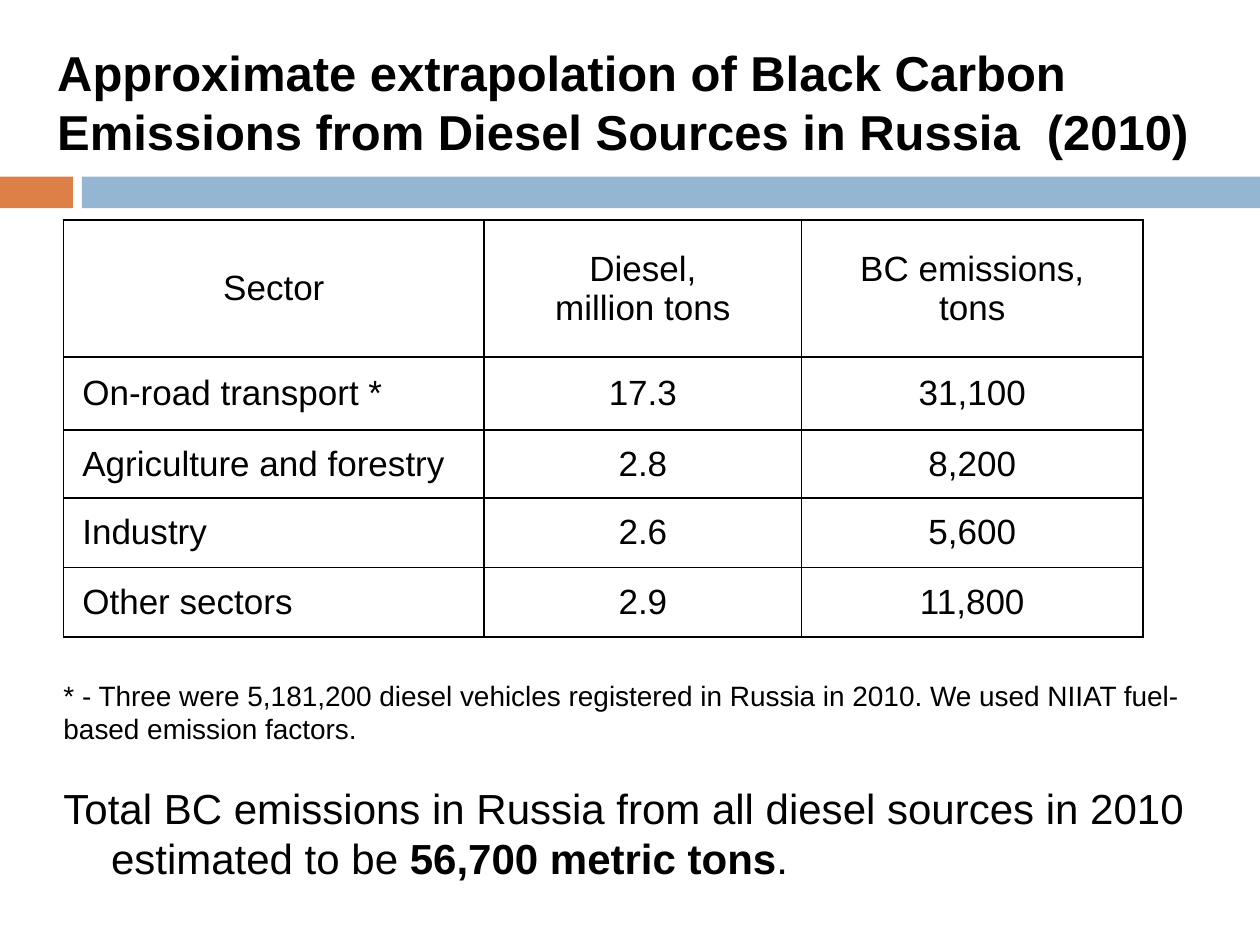
from dataclasses import dataclass

from lxml import etree
from pptx import Presentation
from pptx.dml.color import RGBColor
from pptx.enum.shapes import MSO_SHAPE
from pptx.enum.text import MSO_ANCHOR, MSO_AUTO_SIZE, PP_ALIGN
from pptx.oxml.ns import qn
from pptx.util import Cm, Pt

RECT = MSO_SHAPE.RECTANGLE
MIDDLE = MSO_ANCHOR.MIDDLE
LEFT, CENTER = PP_ALIGN.LEFT, PP_ALIGN.CENTER
NO_FIT = MSO_AUTO_SIZE.NONE
TITLE_ONLY = 5
NO_MARGINS = dict(margin_left=0, margin_right=0, margin_top=0, margin_bottom=0)


@dataclass(frozen=True)
class Theme:
    font: str = "Arial"
    text: str = "000000"
    paper: str = "FFFFFF"
    orange: str = "DD8047"
    blue: str = "94B6D2"
    title: int = 28
    total: int = 24
    table: int = 20
    note: int = 16
    border: int = 1


def apply(obj, values):
    for name, value in values.items():
        setattr(obj, name, value)


class SlideBuilder:
    def __init__(self, prs, theme):
        self.theme = theme
        self.s = prs.slides.add_slide(prs.slide_layouts[TITLE_ONLY])

    def add_text(self, p, text, size, bold=False):
        r = p.add_run()
        r.text = text
        apply(r.font, dict(name=self.theme.font, size=Pt(size), bold=bold))
        r.font.color.rgb = RGBColor.from_string(self.theme.text)

    def bar(self, left, top, width, height, color):
        sp = self.s.shapes.add_shape(RECT, Cm(left), Cm(top), Cm(width), Cm(height))
        sp.shadow.inherit = False
        sp.fill.solid()
        sp.fill.fore_color.rgb = RGBColor.from_string(color)
        sp.line.fill.background()

    def title(self, text, left, top, width, height):
        sp = self.s.shapes.title
        apply(sp, dict(left=Cm(left), top=Cm(top), width=Cm(width), height=Cm(height)))
        tf = sp.text_frame
        apply(tf, dict(word_wrap=True, auto_size=NO_FIT, vertical_anchor=MIDDLE))
        p = tf.paragraphs[0]
        p.alignment = LEFT
        self.add_text(p, text, self.theme.title, bold=True)

    def table(self, rows, left, top, widths, heights, indent):
        frame = self.s.shapes.add_table(len(rows), len(widths), Cm(left), Cm(top),
                                        Cm(sum(widths)), Cm(sum(heights)))
        table = frame.table
        apply(table, dict(first_row=False, horz_banding=False))
        for column, width in zip(table.columns, widths):
            column.width = Cm(width)
        for row, height in zip(table.rows, heights):
            row.height = Cm(height)
        for i, values in enumerate(rows):
            for j, text in enumerate(values):
                is_label = i > 0 and j == 0
                self.cell(table.cell(i, j), text, LEFT if is_label else CENTER,
                          indent if is_label else 0)

    def cell(self, cell, text, align, indent):
        apply(cell, NO_MARGINS | dict(margin_left=Cm(indent), vertical_anchor=MIDDLE))
        tf = cell.text_frame
        for n, line in enumerate(text.split("\n")):
            p = tf.add_paragraph() if n else tf.paragraphs[0]
            p.alignment = align
            self.add_text(p, line, self.theme.table)
        # Borders come before the fill in the cell properties
        props = cell._tc.get_or_add_tcPr()
        for side in ("a:lnL", "a:lnR", "a:lnT", "a:lnB"):
            line = etree.SubElement(props, qn(side), w=str(Pt(self.theme.border)))
            solid = etree.SubElement(line, qn("a:solidFill"))
            etree.SubElement(solid, qn("a:srgbClr"), val=self.theme.text)
        cell.fill.solid()
        cell.fill.fore_color.rgb = RGBColor.from_string(self.theme.paper)

    def text_box(self, paragraphs, left, top, width, height):
        """Each paragraph is (size, space before, hanging indent, runs)."""
        sp = self.s.shapes.add_textbox(Cm(left), Cm(top), Cm(width), Cm(height))
        tf = sp.text_frame
        apply(tf, NO_MARGINS | dict(word_wrap=True, auto_size=NO_FIT))
        for n, (size, before, hanging, runs) in enumerate(paragraphs):
            p = tf.add_paragraph() if n else tf.paragraphs[0]
            apply(p, dict(alignment=LEFT, space_before=Pt(before)))
            if hanging:
                props = p._p.get_or_add_pPr()
                props.set("marL", str(Cm(hanging)))
                props.set("indent", str(-Cm(hanging)))
            for text, bold in runs:
                self.add_text(p, text, size, bold)


def main():
    prs = Presentation()
    prs.slide_width, prs.slide_height = Cm(25.4), Cm(19.05)
    theme = Theme()
    slide = SlideBuilder(prs, theme)

    # Band under the title
    slide.bar(0, 3.56, 1.47, 0.64, theme.orange)
    slide.bar(1.65, 3.56, 23.75, 0.64, theme.blue)

    # Title
    slide.title("Approximate extrapolation of Black Carbon Emissions "
                "from Diesel Sources in Russia  (2010)", 0.9, 0.43, 23.67, 3.23)

    # Emissions by sector
    emissions = [
        ("Sector", "Diesel,\nmillion tons", "BC emissions,\ntons"),
        ("On-road transport *", "17.3", "31,100"),
        ("Agriculture and forestry", "2.8", "8,200"),
        ("Industry", "2.6", "5,600"),
        ("Other sectors", "2.9", "11,800"),
    ]
    slide.table(emissions, 1.28, 4.43, widths=(8.48, 6.4, 6.88),
                heights=(2.77, 1.47, 1.37, 1.4, 1.4), indent=0.38)

    # Footnote and total
    slide.text_box([
        (theme.note, 3.2, 0,
         [("* - Three were 5,181,200 diesel vehicles registered in Russia in 2010. "
           "We used NIIAT fuel-based emission factors.", False)]),
        (theme.total, 21, 0.96,
         [("Total BC emissions in Russia from all diesel sources in 2010 "
           "estimated to be ", False),
          ("56,700 metric tons", True),
          (".", False)]),
    ], 1.28, 13.67, 22.86, 4.24)

    prs.save("out.pptx")


if __name__ == "__main__":
    main()
